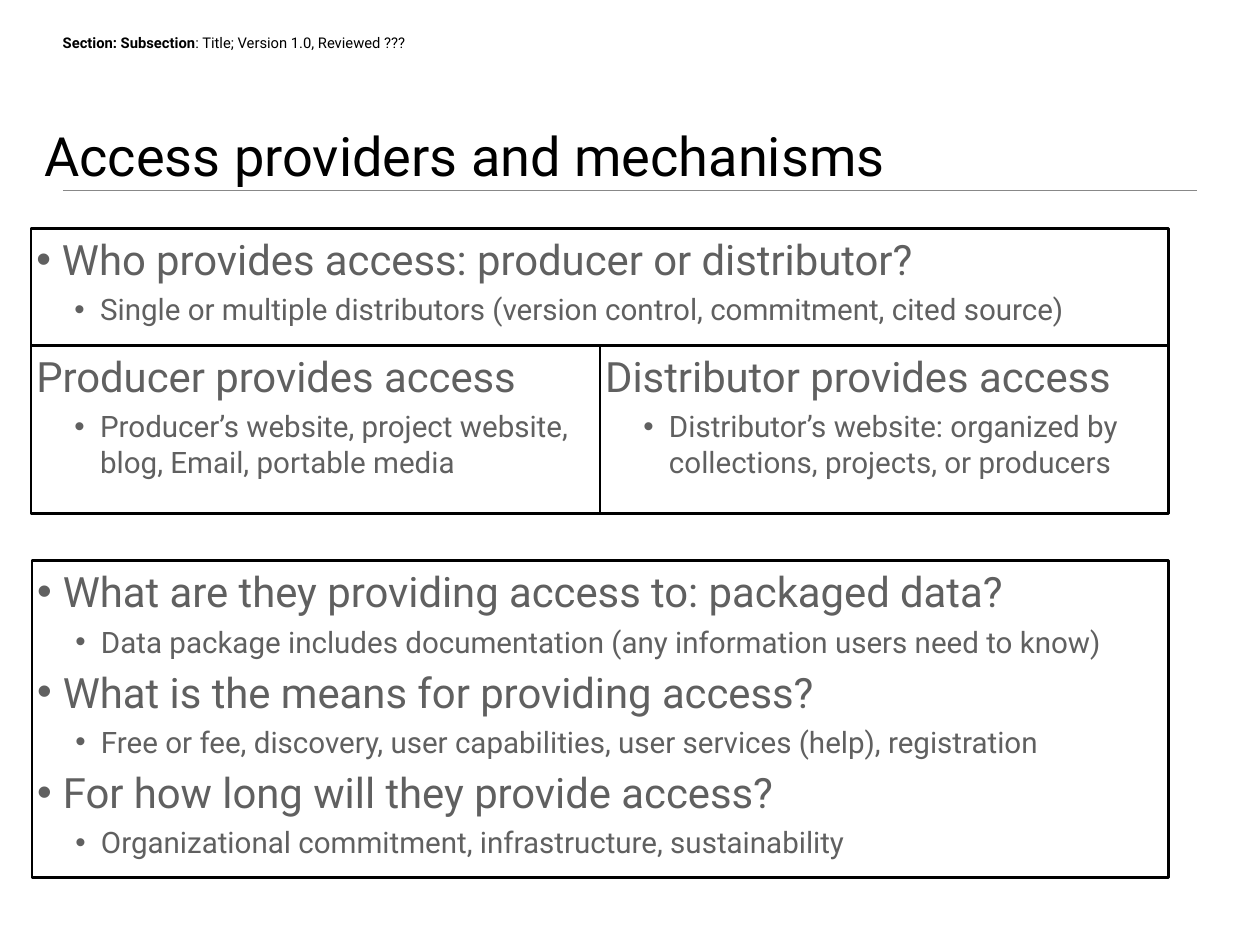
from lxml import etree
from pptx import Presentation
from pptx import util as u
from pptx.dml import color
from pptx.enum import shapes, text
from pptx.oxml import ns

PX = 9144
COLORS = {"ink": "000000", "body": "606060", "rule": "888888"}
FRAME = {
    "margin_left": 6 * PX, "margin_right": 6 * PX,
    "margin_top": 6 * PX, "margin_bottom": 6 * PX,
    "word_wrap": True, "auto_size": text.MSO_AUTO_SIZE.NONE,
    "vertical_anchor": text.MSO_ANCHOR.TOP,
}
SIZES = [34, 24]
INDENTS = [29, 72]
HANGING = 29


def style_span(span, size, shade, bold=False):
    for name, value in {"name": "Roboto", "size": u.Pt(size), "bold": bold}.items():
        setattr(span.font, name, value)
    span.font.color.rgb = color.RGBColor.from_string(COLORS[shade])


def fill_box(box, bounds, lines):
    for name, value in zip(("left", "top", "width", "height"), bounds):
        setattr(box, name, value * PX)
    box.fill.background()
    box.line.width = u.Pt(2)
    box.line.color.rgb = color.RGBColor.from_string(COLORS["ink"])
    frame = box.text_frame
    for name, value in FRAME.items():
        setattr(frame, name, value)
    for index, (level, bulleted, words) in enumerate(lines):
        para = frame.paragraphs[0] if index == 0 else frame.add_paragraph()
        para.level = level
        para.alignment = text.PP_ALIGN.LEFT
        para.space_before = u.Pt(6 if index else 0)
        if bulleted:
            props = para._p.get_or_add_pPr()
            props.set("marL", str(INDENTS[level] * PX))
            props.set("indent", str(-HANGING * PX))
            tint = etree.SubElement(props, ns.qn("a:buClr"))
            etree.SubElement(tint, ns.qn("a:srgbClr"), val=COLORS["body"])
            etree.SubElement(props, ns.qn("a:buFont"), typeface="Arial")
            etree.SubElement(props, ns.qn("a:buChar"), char="•")
        span = para.add_run()
        span.text = words
        style_span(span, SIZES[level], "body")


deck = Presentation()
deck.slide_width, deck.slide_height = 1422 * PX, 1067 * PX
page = deck.slides.add_slide(deck.slide_layouts[1])

rule = page.shapes.add_connector(
    shapes.MSO_CONNECTOR.STRAIGHT, 71 * PX, 215 * PX, 1351 * PX, 215 * PX)
rule.line.width = u.Pt(1)
rule.line.color.rgb = color.RGBColor.from_string(COLORS["rule"])
etree.SubElement(rule._element.spPr, ns.qn("a:effectLst"))

header = page.shapes.add_textbox(61 * PX, 33 * PX, 407 * PX, 30 * PX)
header.text_frame.word_wrap = False
for words, bold in [("Section: Subsection", True),
                    (": Title; Version 1.0, Reviewed ???", False)]:
    span = header.text_frame.paragraphs[0].add_run()
    span.text = words
    style_span(span, 12, "ink", bold)

title = page.shapes.title
for name, value in {"left": 44, "top": 64, "width": 1315, "height": 153}.items():
    setattr(title, name, value * PX)
for name, value in {**FRAME, "vertical_anchor": text.MSO_ANCHOR.BOTTOM}.items():
    setattr(title.text_frame, name, value)
para = title.text_frame.paragraphs[0]
para.alignment = text.PP_ALIGN.LEFT
span = para.add_run()
span.text = "Access providers and mechanisms"
style_span(span, 44, "ink")

fill_box(page.placeholders[1], (36, 633, 1283, 358), [
    (0, True, "What are they providing access to: packaged data?"),
    (1, True, "Data package includes documentation (any information users need to know)"),
    (0, True, "What is the means for providing access?"),
    (1, True, "Free or fee, discovery, user capabilities, user services (help), registration"),
    (0, True, "For how long will they provide access?"),
    (1, True, "Organizational commitment, infrastructure, sustainability"),
])

panels = [
    ((35, 258, 1284, 322), [
        (0, True, "Who provides access: producer or distributor?"),
        (1, True, "Single or multiple distributors (version control, commitment, cited source)"),
    ]),
    ((35, 390, 642, 189), [
        (0, False, "Producer provides access"),
        (1, True, "Producer’s website, project website, blog, Email, portable media"),
    ]),
    ((677, 390, 642, 189), [
        (0, False, "Distributor provides access"),
        (1, True, "Distributor’s website: organized by collections, projects, or producers"),
    ]),
]
for bounds, lines in panels:
    panel = page.shapes.add_shape(shapes.MSO_SHAPE.RECTANGLE, 0, 0, PX, PX)
    panel.shadow.inherit = False
    fill_box(panel, bounds, lines)

deck.save("out.pptx")
